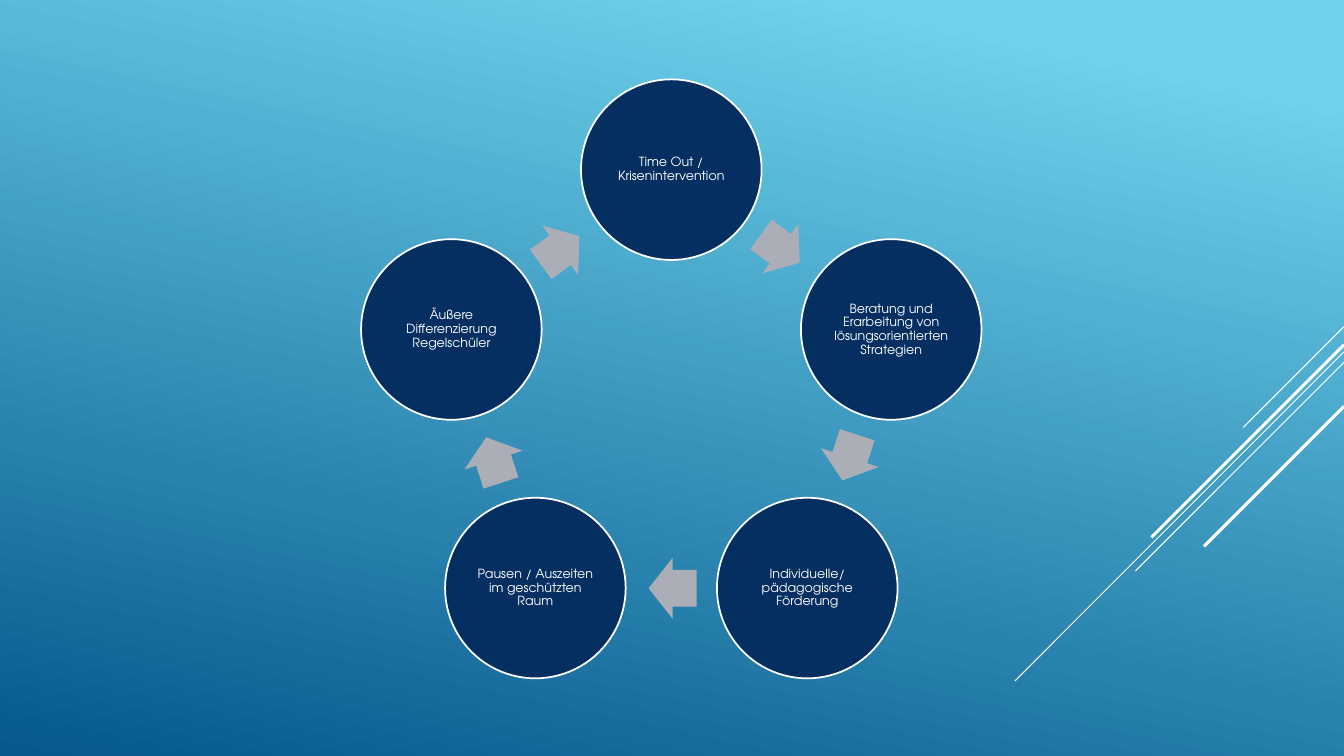
from math import cos, radians, sin

from lxml.etree import SubElement
from pptx import Presentation
from pptx.dml.color import RGBColor
from pptx.enum.shapes import MSO_CONNECTOR as CONNECTOR, MSO_SHAPE as SHAPE
from pptx.enum.text import MSO_ANCHOR as ANCHOR, PP_ALIGN as ALIGN
from pptx.oxml.ns import qn
from pptx.util import Pt

WIDTH, HEIGHT = 960, 540
FONT = "TeX Gyre Adventor"
COLORS = {
    "sky": "6ED2EB",
    "sea": "06588E",
    "navy": "052F61",
    "gray": "ABADB7",
    "white": "FFFFFF",
}
STEPS = [
    "Time Out / Krisenintervention",
    "Beratung und Erarbeitung von lösungsorientierten Strategien",
    "Individuelle/ pädagogische Förderung",
    "Pausen / Auszeiten im geschützten Raum",
    "Äußere Differenzierung Regelschüler",
]
DIAGONALS = [
    (0, 72, 0.75),
    (18, 235, 0.75),
    (25.5, 149, 0.75),
    (13, 137.5, 2.25),
    (57, 100, 2.25),
]


def color(name):
    return RGBColor.from_string(COLORS[name])


def paint_background(slide):
    fill = slide.background.fill
    fill.gradient()
    fill.gradient_angle = 258
    for stop, position, name in zip(fill.gradient_stops, (0.1, 1), ("sky", "sea")):
        stop.position = position
        stop.color.rgb = color(name)


def add_diagonals(slide, left, top, width):
    right = left + width
    for offset, length, weight in DIAGONALS:
        start = top + offset
        line = slide.shapes.add_connector(
            CONNECTOR.STRAIGHT,
            Pt(right), Pt(start), Pt(right - length), Pt(start + length),
        )
        line.line.color.rgb = color("white")
        line.line.width = Pt(weight)
        SubElement(line._element.spPr, qn("a:effectLst"))


def add_centered(slide, kind, x, y, width, height, fill_name):
    shape = slide.shapes.add_shape(
        kind, Pt(x - width / 2), Pt(y - height / 2), Pt(width), Pt(height)
    )
    shape.shadow.inherit = False
    shape.fill.solid()
    shape.fill.fore_color.rgb = color(fill_name)
    return shape


def add_step(slide, x, y, diameter, text):
    circle = add_centered(slide, SHAPE.OVAL, x, y, diameter, diameter, "navy")
    circle.line.color.rgb = color("white")
    circle.line.width = Pt(1.25)
    frame = circle.text_frame
    frame.text = text
    frame.word_wrap = True
    frame.vertical_anchor = ANCHOR.MIDDLE
    frame.margin_left = frame.margin_right = Pt(0.9)
    frame.margin_top = frame.margin_bottom = Pt(0.9)
    paragraph = frame.paragraphs[0]
    paragraph.alignment = ALIGN.CENTER
    paragraph.line_spacing = 0.9
    font = paragraph.runs[0].font
    font.name = FONT
    font.size = Pt(9)
    font.color.rgb = color("white")


def add_arrow(slide, x, y, rotation):
    arrow = add_centered(slide, SHAPE.RIGHT_ARROW, x, y, 34.3, 43.5, "gray")
    arrow.line.fill.background()
    arrow.adjustments[0] = 0.6
    arrow.adjustments[1] = 0.5
    arrow.rotation = rotation


def add_cycle(slide, left, top, width, diameter=129):
    turn = 360 / len(STEPS)
    radius = (width - diameter) / 2 / sin(radians(turn))
    center_x = left + width / 2
    center_y = top + diameter / 2 + radius

    def on_ring(distance, angle):
        return (
            center_x + distance * sin(radians(angle)),
            center_y - distance * cos(radians(angle)),
        )

    for index, text in enumerate(STEPS):
        angle = index * turn
        between = angle + turn / 2
        add_step(slide, *on_ring(radius, angle), diameter, text)
        add_arrow(slide, *on_ring(radius * 0.81, between - 0.4), between)


def main():
    presentation = Presentation()
    presentation.slide_width = Pt(WIDTH)
    presentation.slide_height = Pt(HEIGHT)
    slide = presentation.slides.add_slide(presentation.slide_layouts[6])
    paint_background(slide)
    add_diagonals(slide, 725, 233.3, WIDTH - 725)
    add_cycle(slide, 257.9, 56.7, 443.2)
    presentation.save("out.pptx")


if __name__ == "__main__":
    main()
